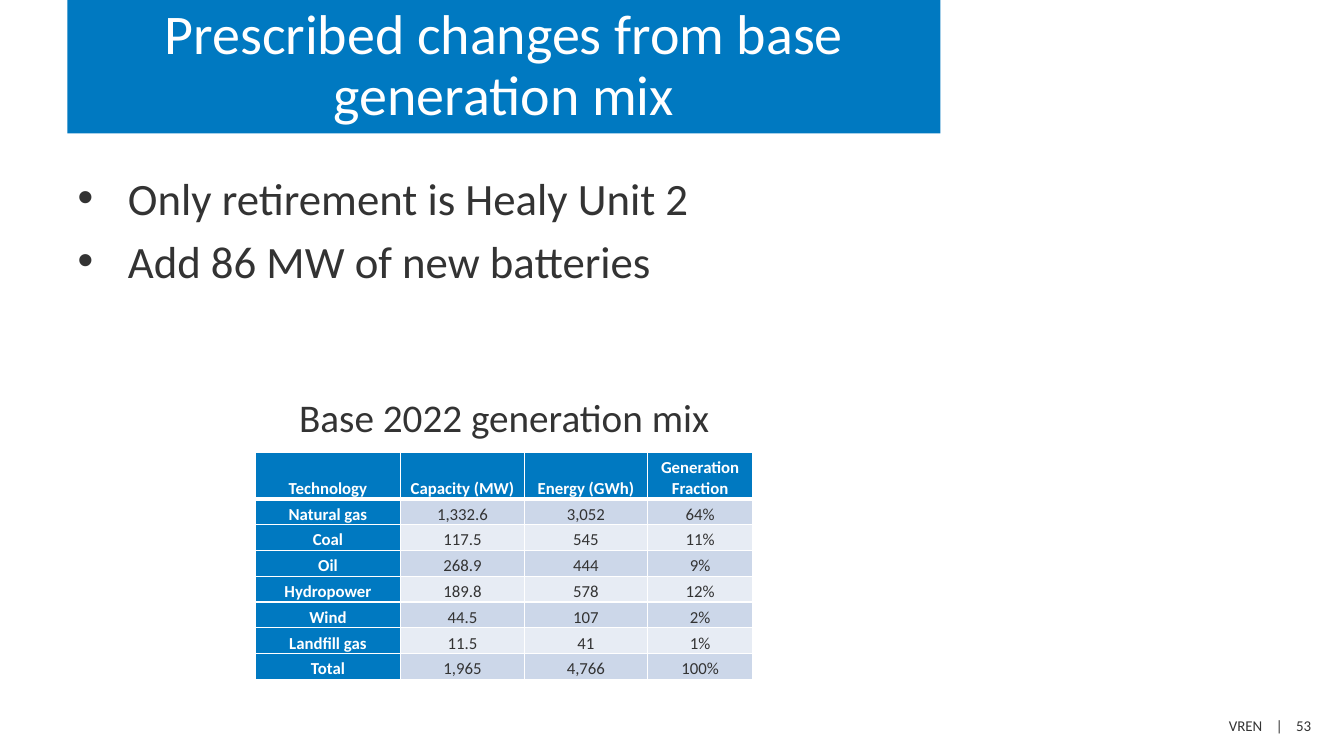
from lxml.etree import SubElement
from pptx import Presentation
from pptx.dml.color import RGBColor
from pptx.enum.text import MSO_ANCHOR, MSO_AUTO_SIZE, PP_ALIGN
from pptx.oxml.ns import qn
from pptx.util import Cm, Pt

TITLE = "Prescribed changes from base generation mix"
BULLETS = ["Only retirement is Healy Unit 2", "Add 86 MW of new batteries"]
CAPTION = "Base 2022 generation mix"
FOOTER = "VREN\u00a0\u00a0\u00a0 |\u00a0\u00a0\u00a0 53".replace("\u00a0", " ")
GENERATION_MIX = [
    ("Technology", "Capacity (MW)", "Energy (GWh)", "Generation Fraction"),
    ("Natural gas", "1,332.6", "3,052", "64%"),
    ("Coal", "117.5", "545", "11%"),
    ("Oil", "268.9", "444", "9%"),
    ("Hydropower", "189.8", "578", "12%"),
    ("Wind", "44.5", "107", "2%"),
    ("Landfill gas", "11.5", "41", "1%"),
    ("Total", "1,965", "4,766", "100%"),
]
COLUMN_WIDTHS = [3.67, 3.11, 3.11, 2.65]
HEADER_HEIGHT, ROW_HEIGHT = 1.17, 0.65
BLUE, WHITE, DARK = "0079C1", "FFFFFF", "333333"
BANDS = ["CCD7E9", "E7ECF4"]


def color(value):
    return RGBColor.from_string(value)


def write(paragraph, text, size, text_color=DARK, bold=False, align=PP_ALIGN.LEFT):
    paragraph.alignment = align
    run = paragraph.add_run()
    run.text = text
    run.font.name = "Calibri"
    run.font.size = Pt(size)
    run.font.bold = bold
    run.font.color.rgb = color(text_color)


def place(shape, left, top, width, height):
    shape.left, shape.top = Cm(left), Cm(top)
    shape.width, shape.height = Cm(width), Cm(height)


def add_label(slide, text, box, size, align):
    shape = slide.shapes.add_textbox(*map(Cm, box))
    shape.text_frame.word_wrap = True
    write(shape.text_frame.paragraphs[0], text, size, align=align)


def add_bullet(paragraph):
    properties = paragraph._p.get_or_add_pPr()
    properties.set("marL", str(Cm(1.27)))
    properties.set("indent", str(Cm(-1.27)))
    SubElement(properties, qn("a:buFont"), typeface="Arial")
    SubElement(properties, qn("a:buChar"), char="•")


def add_borders(cell, row_index):
    properties = cell._tc.get_or_add_tcPr()
    widths = {"lnL": 1, "lnR": 1,
              "lnT": 3 if row_index == 1 else 1,
              "lnB": 3 if row_index == 0 else 1}
    for side, width in widths.items():
        line = SubElement(properties, qn(f"a:{side}"), w=str(Pt(width)))
        fill = SubElement(line, qn("a:solidFill"))
        SubElement(fill, qn("a:srgbClr"), val=WHITE)


def add_mix_table(slide):
    height = HEADER_HEIGHT + ROW_HEIGHT * (len(GENERATION_MIX) - 1)
    table = slide.shapes.add_table(
        len(GENERATION_MIX), len(COLUMN_WIDTHS),
        Cm(6.43), Cm(11.4), Cm(sum(COLUMN_WIDTHS)), Cm(height)).table
    for column, width in zip(table.columns, COLUMN_WIDTHS):
        column.width = Cm(width)
    for row_index, values in enumerate(GENERATION_MIX):
        table.rows[row_index].height = Cm(ROW_HEIGHT if row_index else HEADER_HEIGHT)
        for column_index, value in enumerate(values):
            heading = row_index == 0 or column_index == 0
            cell = table.cell(row_index, column_index)
            cell.vertical_anchor = MSO_ANCHOR.BOTTOM
            cell.margin_left = cell.margin_right = Cm(0.23)
            cell.margin_top = cell.margin_bottom = 0
            add_borders(cell, row_index)
            cell.fill.solid()
            cell.fill.fore_color.rgb = color(BLUE if heading else BANDS[(row_index - 1) % 2])
            write(cell.text_frame.paragraphs[0], value, 12,
                  WHITE if heading else DARK, heading, PP_ALIGN.CENTER)


def main():
    presentation = Presentation()
    presentation.slide_width, presentation.slide_height = Cm(33.87), Cm(19.05)
    slide = presentation.slides.add_slide(presentation.slide_layouts[1])

    title = slide.shapes.title
    place(title, 1.7, 0, 22, 3.36)
    title.fill.solid()
    title.fill.fore_color.rgb = color(BLUE)
    title.text_frame.auto_size = MSO_AUTO_SIZE.NONE
    title.text_frame.vertical_anchor = MSO_ANCHOR.MIDDLE
    title.text_frame.paragraphs[0].line_spacing = 0.9
    write(title.text_frame.paragraphs[0], TITLE, 40, WHITE, align=PP_ALIGN.CENTER)

    body = slide.placeholders[1]
    place(body, 1.7, 4.17, 30.07, 13.41)
    frame = body.text_frame
    frame.auto_size = MSO_AUTO_SIZE.NONE
    for index, text in enumerate(BULLETS):
        paragraph = frame.add_paragraph() if index else frame.paragraphs[0]
        paragraph.space_before = Pt(6.4)
        add_bullet(paragraph)
        write(paragraph, text, 32)

    add_mix_table(slide)
    add_label(slide, CAPTION, (7.29, 9.78, 12.52, 1.45), 28, PP_ALIGN.LEFT)
    add_label(slide, FOOTER, (24.87, 17.93, 8.43, 0.71), 10.7, PP_ALIGN.RIGHT)
    presentation.save("out.pptx")


if __name__ == "__main__":
    main()
